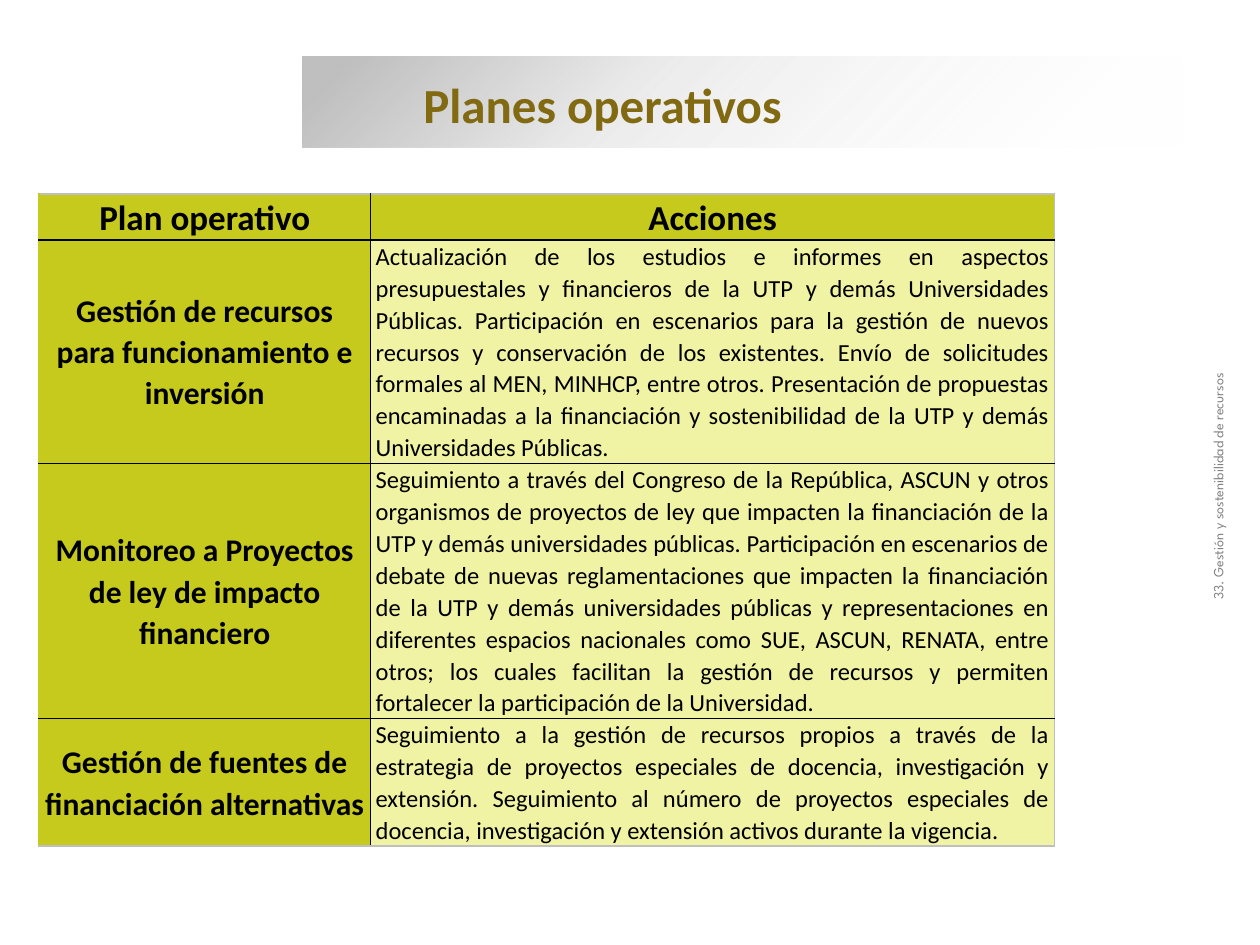
from lxml.etree import SubElement
from pptx import Presentation
from pptx.dml.color import RGBColor
from pptx.enum.shapes import MSO_SHAPE
from pptx.enum.text import MSO_ANCHOR, PP_ALIGN
from pptx.oxml import parse_xml
from pptx.oxml.ns import nsdecls, qn
from pptx.util import Pt

GREEN, PALE, GREY, BLACK = "C6CA1C", "F0F2A4", "BFBFBF", "000000"

ROWS = [
    ("Plan operativo", "Acciones"),
    ("Gestión de recursos para funcionamiento e inversión",
     "Actualización de los estudios e informes en aspectos presupuestales y "
     "financieros de la UTP y demás Universidades Públicas. Participación en "
     "escenarios para la gestión de nuevos recursos y conservación de los "
     "existentes. Envío de solicitudes formales al MEN, MINHCP, entre otros. "
     "Presentación de propuestas encaminadas a la financiación y "
     "sostenibilidad de la UTP y demás Universidades Públicas."),
    ("Monitoreo a Proyectos de ley de impacto financiero",
     "Seguimiento a través del Congreso de la República, ASCUN y otros "
     "organismos de proyectos de ley que impacten la financiación de la UTP y "
     "demás universidades públicas. Participación en escenarios de debate de "
     "nuevas reglamentaciones que impacten la financiación de la UTP y demás "
     "universidades públicas y representaciones en diferentes espacios "
     "nacionales como SUE, ASCUN, RENATA, entre otros; los cuales facilitan "
     "la gestión de recursos y permiten fortalecer la participación de la "
     "Universidad."),
    ("Gestión de fuentes de financiación alternativas",
     "Seguimiento a la gestión de recursos propios a través de la estrategia "
     "de proyectos especiales de docencia, investigación y extensión. "
     "Seguimiento al número de proyectos especiales de docencia, "
     "investigación y extensión activos durante la vigencia."),
]
HEIGHTS = (25.7, 125.7, 144, 71.5)
WIDTHS = (189.4, 391)


def paint(text):
    return RGBColor.from_string(text)


def write(para, text, size, color, font="Calibri", bold=False):
    run = para.add_run()
    run.text = text
    run.font.name = font
    run.font.size = Pt(size)
    run.font.bold = bold
    run.font.color.rgb = paint(color)


def shade(shape, stops, angle):
    props = shape._element.spPr
    grad = parse_xml(f'<a:gradFill {nsdecls("a")} rotWithShape="1"/>')
    marks = SubElement(grad, qn("a:gsLst"))
    for spot, color, alpha in stops:
        mark = SubElement(marks, qn("a:gs"), pos=str(spot * 1000))
        tint = SubElement(mark, qn("a:srgbClr"), val=color)
        SubElement(tint, qn("a:alpha"), val=str(alpha * 1000))
    SubElement(grad, qn("a:lin"), ang=str(angle * 60000), scaled="1")
    props.find(qn("a:prstGeom")).addnext(grad)


def edge(cell, side, color, width):
    line = SubElement(cell._tc.get_or_add_tcPr(), qn(f"a:ln{side}"),
                      w=str(Pt(width)))
    fill = SubElement(line, qn("a:solidFill"))
    SubElement(fill, qn("a:srgbClr"), val=color)


def add_title(slide, left, top, width, height):
    band = slide.shapes.add_shape(MSO_SHAPE.RECTANGLE, Pt(left), Pt(top),
                                  Pt(width), Pt(height))
    band.shadow.inherit = False
    band.line.fill.background()
    shade(band, [(5, GREY, 100), (37, GREY, 31), (100, "FFFFFF", 0)], 45)
    title = slide.shapes.title
    title.left, title.top = Pt(left + 62), Pt(top + 6.5)
    title.width, title.height = Pt(446.4), Pt(41)
    band._element.addnext(title._element)
    frame = title.text_frame
    frame.vertical_anchor = MSO_ANCHOR.MIDDLE
    para = frame.paragraphs[0]
    para.alignment = PP_ALIGN.LEFT
    write(para, "Planes operativos", 28, "826A12", bold=True)


def add_plans(slide, left, top):
    grid = slide.shapes.add_table(len(ROWS), 2, Pt(left), Pt(top),
                                  Pt(sum(WIDTHS)), Pt(sum(HEIGHTS))).table
    for col, width in zip(grid.columns, WIDTHS):
        col.width = Pt(width)
    for row, height in zip(grid.rows, HEIGHTS):
        row.height = Pt(height)
    last = len(ROWS) - 1
    for r, texts in enumerate(ROWS):
        for c, text in enumerate(texts):
            cell = grid.cell(r, c)
            body = r > 0 and c > 0
            edge(cell, "L", BLACK if c else GREEN, 1)
            edge(cell, "R", GREY if c else BLACK, 1)
            edge(cell, "T", BLACK if r else GREY, 1)
            edge(cell, "B", BLACK if r < last else GREY, 1)
            cell.fill.solid()
            cell.fill.fore_color.rgb = paint(PALE if body else GREEN)
            cell.margin_left = cell.margin_right = Pt(3)
            cell.margin_top = cell.margin_bottom = 0
            cell.vertical_anchor = MSO_ANCHOR.MIDDLE
            para = cell.text_frame.paragraphs[0]
            para.alignment = PP_ALIGN.JUSTIFY if body else PP_ALIGN.CENTER
            para.line_spacing = 1.07
            size = 14 if body else 18 if r else 20
            write(para, text, size, BLACK, bold=not body)


def add_label(slide, left, top, width, height):
    box = slide.shapes.add_textbox(Pt(left), Pt(top), Pt(width), Pt(height))
    box.rotation = 270
    box.text_frame.word_wrap = True
    para = box.text_frame.paragraphs[0]
    para.alignment = PP_ALIGN.CENTER
    write(para, "33. Gestión y sostenibilidad de recursos", 8, "808080",
          "League Spartan")


def main():
    deck = Presentation()
    deck.slide_width, deck.slide_height = Pt(720), Pt(540)
    slide = deck.slides.add_slide(deck.slide_layouts[5])
    add_title(slide, 172.8, 32.4, 502.6, 51.8)
    add_plans(slide, 22.3, 110.9)
    add_label(slide, 522, 269.3, 348.5, 17.3)
    deck.save("out.pptx")


if __name__ == "__main__":
    main()
